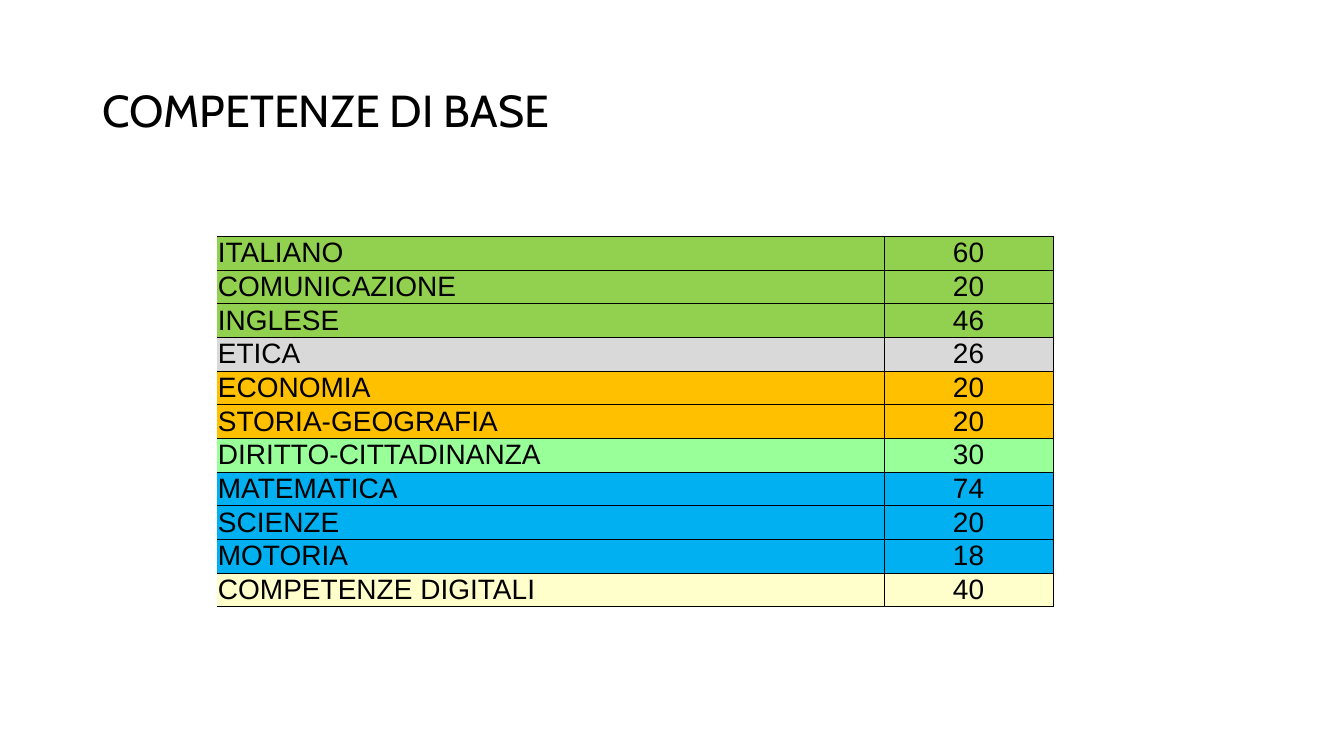
from lxml import etree
from pptx import Presentation
from pptx.dml.color import RGBColor
from pptx.enum.text import MSO_ANCHOR, PP_ALIGN
from pptx.oxml.ns import qn
from pptx.util import Pt

MIDDLE = MSO_ANCHOR.MIDDLE
LEFT, CENTER = PP_ALIGN.LEFT, PP_ALIGN.CENTER

COLORS = {
    "ink": "000000",
    "languages": "92D050",
    "ethics": "D9D9D9",
    "society": "FFC000",
    "law": "99FF99",
    "science": "00B0F0",
    "digital": "FFFFCC",
}

SUBJECTS = [
    ("ITALIANO", 60, "languages"),
    ("COMUNICAZIONE", 20, "languages"),
    ("INGLESE", 46, "languages"),
    ("ETICA", 26, "ethics"),
    ("ECONOMIA", 20, "society"),
    ("STORIA-GEOGRAFIA", 20, "society"),
    ("DIRITTO-CITTADINANZA", 30, "law"),
    ("MATEMATICA", 74, "science"),
    ("SCIENZE", 20, "science"),
    ("MOTORIA", 18, "science"),
    ("COMPETENZE DIGITALI", 40, "digital"),
]


def write(frame, text, font="Arial", size=20, align=LEFT, spacing=None):
    paragraph = frame.paragraphs[0]
    paragraph.alignment = align
    paragraph.line_spacing = spacing
    run = paragraph.add_run()
    run.text = text
    run.font.name = font
    run.font.size = Pt(size)
    run.font.color.rgb = RGBColor.from_string(COLORS["ink"])


def set_borders(cell, **widths):
    properties = cell._tc.get_or_add_tcPr()
    for position, side in enumerate("LRTB"):
        width = widths[side]
        line = etree.Element(qn(f"a:ln{side}"), w=str(int(Pt(width))))
        if width:
            fill = etree.SubElement(line, qn("a:solidFill"))
            etree.SubElement(fill, qn("a:srgbClr"), val=COLORS["ink"])
        else:
            etree.SubElement(line, qn("a:noFill"))
        properties.insert(position, line)


def add_title(slide, left, top, width, height):
    title = slide.shapes.add_textbox(Pt(left), Pt(top), Pt(width), Pt(height))
    frame = title.text_frame
    frame.word_wrap = True
    frame.vertical_anchor = MIDDLE
    write(frame, "COMPETENZE DI BASE", font="Cabin", size=32, spacing=0.9)


def add_hours_table(slide, left, top, width, height):
    hours_width = 120.7
    last = len(SUBJECTS) - 1
    table = slide.shapes.add_table(
        len(SUBJECTS), 2, Pt(left), Pt(top), Pt(width), Pt(height)
    ).table
    table.first_row = False
    table.horz_banding = False
    table.columns[0].width = Pt(width - hours_width)
    table.columns[1].width = Pt(hours_width)
    for row, (subject, hours, area) in enumerate(SUBJECTS):
        table.rows[row].height = Pt(height / len(SUBJECTS))
        for column, (text, align) in enumerate(((subject, LEFT), (str(hours), CENTER))):
            cell = table.cell(row, column)
            cell.margin_left = cell.margin_right = Pt(0.4)
            cell.margin_top = cell.margin_bottom = 0
            cell.vertical_anchor = MIDDLE
            cell.fill.solid()
            cell.fill.fore_color.rgb = RGBColor.from_string(COLORS[area])
            set_borders(
                cell,
                L=0.5 if column else 0,
                R=0.5,
                T=1 if row == 0 else 0.5,
                B=1 if row == last else 0.5,
            )
            write(cell.text_frame, text, align=align)


def main():
    presentation = Presentation()
    presentation.slide_width = Pt(960)
    presentation.slide_height = Pt(540)
    slide = presentation.slides.add_slide(presentation.slide_layouts[6])
    add_title(slide, 66, 28.75, 828, 104.4)
    add_hours_table(slide, 155.2, 168.8, 597, 249.7)
    presentation.save("out.pptx")


if __name__ == "__main__":
    main()
